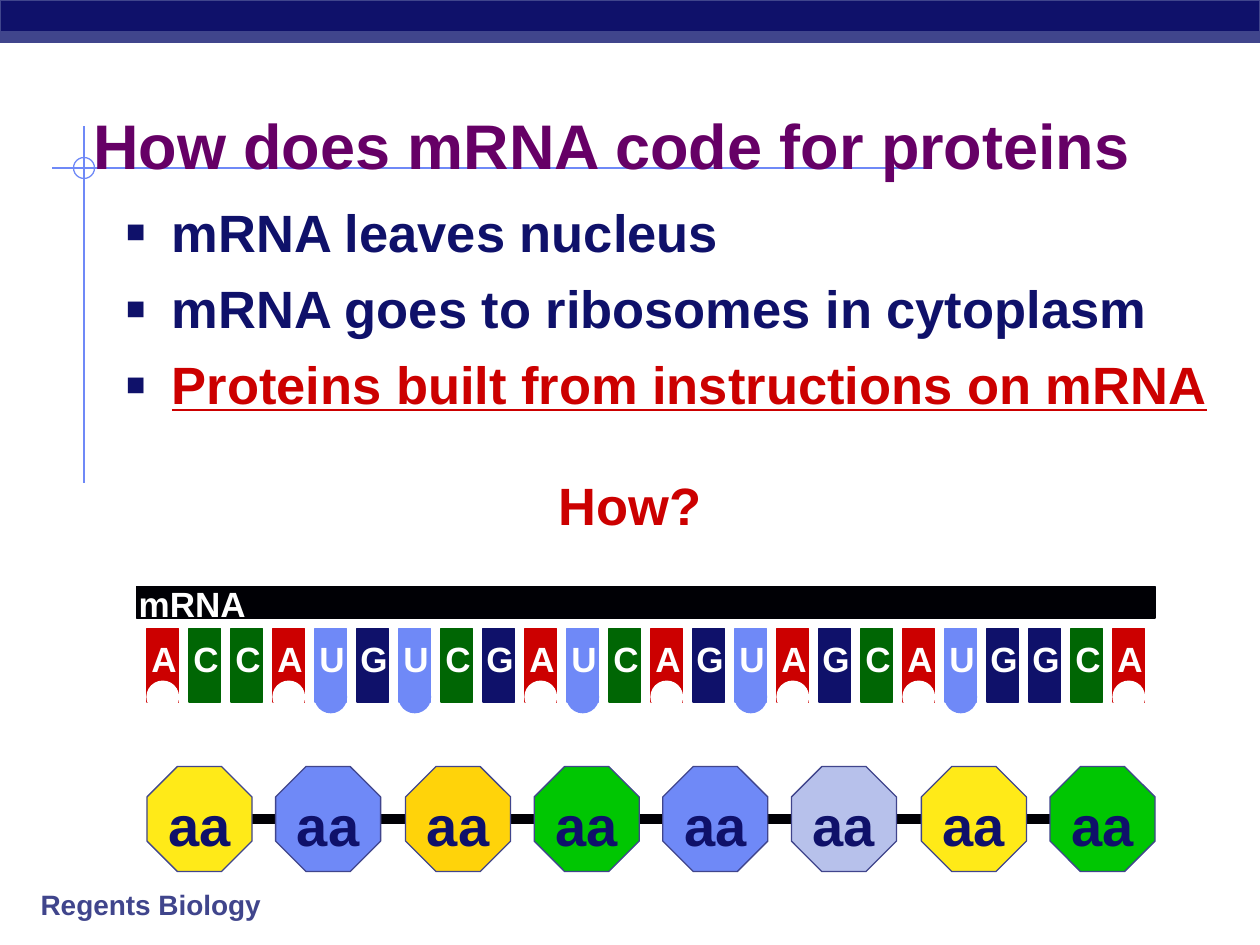
import pptx
import pptx.dml.color
import pptx.enum.shapes
import pptx.enum.text
import pptx.oxml.ns
import pptx.util
import lxml.etree

PX = 9525  # EMU per px, 96 px to the inch
COLORS = {
    "navy": "0F116A", "slate": "40458C", "blue": "6F89F7", "purple": "660066",
    "red": "CC0000", "green": "006604", "black": "000005", "white": "FFFFFF",
    "yellow": "FFEA18", "gold": "FFD30A", "lime": "00C602", "lavender": "B7C1EB",
}
RGB = {name: pptx.dml.color.RGBColor.from_string(value) for name, value in COLORS.items()}
SHAPES = pptx.enum.shapes.MSO_SHAPE
ALIGN = pptx.enum.text.PP_ALIGN
ANCHOR = pptx.enum.text.MSO_ANCHOR

presentation = pptx.Presentation()
presentation.slide_width = 960 * PX
presentation.slide_height = 720 * PX
slide = presentation.slides.add_slide(presentation.slide_layouts[6])


def add_shape(kind, box, fill, line):
    shape = slide.shapes.add_shape(kind, *[length * PX for length in box])
    shape.shadow.inherit = False
    if fill:
        shape.fill.solid()
        shape.fill.fore_color.rgb = RGB[fill]
    else:
        shape.fill.background()
    shape.line.color.rgb = RGB[line]
    shape.line.width = pptx.util.Pt(0.75)
    return shape


def write_text(shape, lines, size, align, anchor, wrap, margins):
    """Fill a shape with (text, color, underline) lines; margins are left, top, right, bottom."""
    frame = shape.text_frame
    left, top, right, bottom = [margin * PX for margin in margins]
    frame_format = {
        "word_wrap": wrap, "vertical_anchor": anchor, "margin_left": left,
        "margin_top": top, "margin_right": right, "margin_bottom": bottom,
    }
    for name, value in frame_format.items():
        setattr(frame, name, value)
    for index, (text, color, underline) in enumerate(lines):
        paragraph = frame.add_paragraph() if index else frame.paragraphs[0]
        paragraph.alignment = align
        run = paragraph.add_run()
        run.text = text
        font_format = {
            "name": "Arial", "size": pptx.util.Pt(size), "bold": True, "underline": underline,
        }
        for name, value in font_format.items():
            setattr(run.font, name, value)
        run.font.color.rgb = RGB[color]


# Crosshair, header bars and the bond behind the amino acids
for start_x, start_y, end_x, end_y, color, width in [
    (40, 128, 704, 128, "blue", 1),
    (64, 96, 64, 368, "blue", 1),
    (144, 624, 856, 624, "black", 6),
]:
    connector = slide.shapes.add_connector(
        pptx.enum.shapes.MSO_CONNECTOR.STRAIGHT,
        start_x * PX, start_y * PX, end_x * PX, end_y * PX)
    connector.line.color.rgb = RGB[color]
    connector.line.width = pptx.util.Pt(width)
    properties = connector._element.spPr
    lxml.etree.SubElement(properties, pptx.oxml.ns.qn("a:effectLst"))

add_shape(SHAPES.OVAL, (56, 120, 16, 16), None, "blue")
add_shape(SHAPES.RECTANGLE, (0, 0, 960, 32), "navy", "slate")
add_shape(SHAPES.RECTANGLE, (0, 24, 960, 8), "slate", "slate")

# Footer, title and question
for text, box, size, color, align, anchor, wrap, margins in [
    ("Regents Biology", (24, 671, 192, 36), 16, "slate",
     ALIGN.LEFT, ANCHOR.MIDDLE, True, (7, 4, 7, 4)),
    ("How does mRNA code for proteins", (64, 72, 816, 80), 36, "purple",
     ALIGN.LEFT, ANCHOR.TOP, True, (7, 9, 7, 4)),
    ("How?", (416, 355, 128, 58), 30, "red",
     ALIGN.CENTER, ANCHOR.MIDDLE, False, (7, 4, 7, 4)),
]:
    text_box = slide.shapes.add_textbox(*[length * PX for length in box])
    write_text(text_box, [(text, color, False)], size, align, anchor, wrap, margins)

# Bulleted steps
steps = slide.shapes.add_textbox(88 * PX, 144 * PX, 872 * PX, 282 * PX)
write_text(steps, [
    ("mRNA leaves nucleus", "navy", False),
    ("mRNA goes to ribosomes in cytoplasm", "navy", False),
    ("Proteins built from instructions on mRNA", "red", True),
], 30, ALIGN.LEFT, ANCHOR.TOP, True, (7, 8, 7, 4))
for index, paragraph in enumerate(steps.text_frame.paragraphs):
    paragraph.space_before = pptx.util.Pt(7.5 if index else 0)
    properties = paragraph._p.get_or_add_pPr()
    properties.set("marL", str(36 * PX))
    properties.set("indent", str(-36 * PX))
    bullet_color = lxml.etree.SubElement(properties, pptx.oxml.ns.qn("a:buClr"))
    lxml.etree.SubElement(bullet_color, pptx.oxml.ns.qn("a:srgbClr"), val=COLORS["navy"])
    lxml.etree.SubElement(properties, pptx.oxml.ns.qn("a:buSzPct"), val="120000")
    lxml.etree.SubElement(properties, pptx.oxml.ns.qn("a:buFont"), typeface="Arial")
    lxml.etree.SubElement(properties, pptx.oxml.ns.qn("a:buChar"), char="▪")

# Amino acid chain
amino_acids = ["yellow", "blue", "gold", "lime", "blue", "lavender", "yellow", "lime"]
for index, color in enumerate(amino_acids):
    left = 112 + round(688 * index / 7)
    octagon = add_shape(SHAPES.OCTAGON, (left, 584, 80, 80), color, "slate")
    octagon.adjustments[0] = 0.29
    write_text(octagon, [("aa", "navy", False)], 32,
               ALIGN.CENTER, ANCHOR.MIDDLE, False, (0, 8, 0, 0))

# mRNA strand: A has a notch, U has a rounded end
add_shape(SHAPES.RECTANGLE, (104, 447, 776, 24), "black", "black")
base_colors = {"A": "red", "C": "green", "G": "navy", "U": "blue"}
end_colors = {"A": "white", "U": "blue"}
labels = [("mRNA", 96, 439, 101)]
for index, base in enumerate("ACCAUGUCGAUCAGUAGCAUGGCA"):
    left = 112 + 32 * index
    color = base_colors[base]
    add_shape(SHAPES.RECTANGLE, (left, 479, 24, 56), color, color)
    if base in end_colors:
        end_color = end_colors[base]
        add_shape(SHAPES.OVAL, (left, 519, 24, 24), end_color, end_color)
    labels.append((base, left - 6, 481, 38))

for text, left, top, width in labels:
    label = slide.shapes.add_textbox(left * PX, top * PX, width * PX, 41 * PX)
    write_text(label, [(text, "white", False)], 20,
               ALIGN.CENTER, ANCHOR.MIDDLE, False, (7, 4, 7, 4))

presentation.save("out.pptx")
